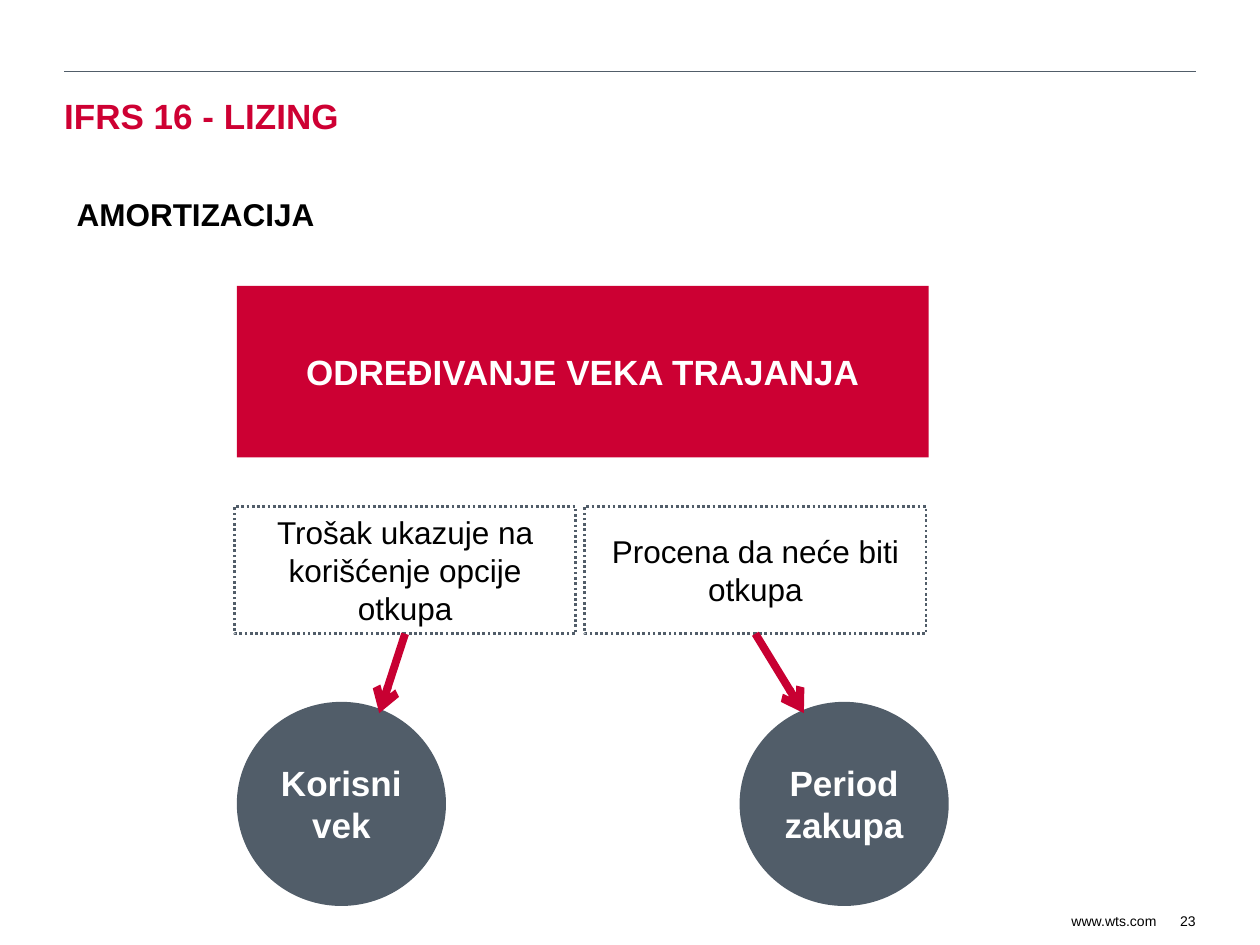
from dataclasses import dataclass

from lxml import etree
from pptx import Presentation
from pptx import util as u
from pptx.dml import color
from pptx.enum import dml, shapes, text
from pptx.oxml import ns


@dataclass(frozen=True)
class Theme:
    font: str = "Arial"
    title_red: str = "CE0033"
    banner_red: str = "CC0033"
    arrow_red: str = "C80032"
    slate: str = "515D69"
    black: str = "000000"
    white: str = "FFFFFF"
    large: int = 20
    medium: int = 18
    small: int = 8


THEME = Theme()
KIND = shapes.MSO_SHAPE
ALIGN = text.PP_ALIGN
ANCHOR = text.MSO_ANCHOR


def rgb(value):
    return color.RGBColor.from_string(value)


def inches(*values):
    return [u.Inches(value) for value in values]


def write(frame, words, size, ink, bold=False, align=ALIGN.LEFT,
          anchor=ANCHOR.MIDDLE, wrap=True, margins=None):
    frame.word_wrap = wrap
    frame.auto_size = text.MSO_AUTO_SIZE.NONE
    frame.vertical_anchor = anchor
    if margins is not None:
        (frame.margin_left, frame.margin_top,
         frame.margin_right, frame.margin_bottom) = inches(*margins)
    paragraph = frame.paragraphs[0]
    paragraph.alignment = align
    run = paragraph.add_run()
    run.text = words
    run.font.name = THEME.font
    run.font.size = u.Pt(size)
    run.font.bold = bold
    run.font.color.rgb = rgb(ink)


def add_line(slide, start, end, ink, width):
    line = slide.shapes.add_connector(
        shapes.MSO_CONNECTOR.STRAIGHT, *inches(*start, *end))
    line.line.color.rgb = rgb(ink)
    line.line.width = u.Pt(width)
    etree.SubElement(line._element.spPr, ns.qn("a:effectLst"))
    return line


def add_filled(slide, kind, box, fill, words):
    filled = slide.shapes.add_shape(kind, *inches(*box))
    filled.shadow.inherit = False
    filled.fill.solid()
    filled.fill.fore_color.rgb = rgb(fill)
    filled.line.fill.background()
    write(filled.text_frame, words, THEME.large, THEME.white, True, ALIGN.CENTER)


def add_condition(slide, box, words):
    condition = slide.shapes.add_shape(KIND.RECTANGLE, *inches(*box))
    condition.shadow.inherit = False
    condition.fill.background()
    condition.line.color.rgb = rgb(THEME.slate)
    condition.line.width = u.Pt(1.5)
    condition.line.dash_style = dml.MSO_LINE.ROUND_DOT
    write(condition.text_frame, words, THEME.medium, THEME.black, align=ALIGN.CENTER)


def add_arrow(slide, start, end):
    arrow = add_line(slide, start, end, THEME.arrow_red, 4.5)
    etree.SubElement(arrow.line._get_or_add_ln(), ns.qn("a:tailEnd"), type="arrow")


def add_header(slide, box):
    left, top, width, height = box
    # Rule above the title
    add_line(slide, (left, top), (left + width, top), THEME.slate, 0.75)
    # Title
    title = slide.shapes.title
    title.left, title.top, title.width, title.height = inches(
        left, top + 0.15, width, 0.67)
    write(title.text_frame, "IFRS 16 - LIZING", THEME.large, THEME.title_red,
          True, anchor=ANCHOR.TOP, margins=(0, 0.03, 0, 0))
    # Topic
    topic = slide.shapes.add_textbox(*inches(left, top + 0.93, 8.82, height - 0.93))
    write(topic.text_frame, "AMORTIZACIJA", THEME.medium, THEME.black,
          True, anchor=ANCHOR.TOP)


def add_decision(slide, box):
    left, top, width, height = box
    # Banner
    add_filled(slide, KIND.RECTANGLE, (left, top, width, 1.36),
               THEME.banner_red, "ODREĐIVANJE VEKA TRAJANJA")

    # Each branch: condition, outcome, outcome offset, arrow tip offset
    branches = [
        ("Trošak ukazuje na korišćenje opcije otkupa", "Korisni vek", 0, 1.13),
        ("Procena da neće biti otkupa", "Period zakupa", 3.99, 4.5),
    ]
    condition_w, condition_h, pitch = 2.71, 1.01, 2.78
    condition_top = top + 1.75
    outcome_w, outcome_h = 1.66, 1.62
    for index, (condition, outcome, offset, tip) in enumerate(branches):
        condition_left = left - 0.02 + index * pitch
        add_filled(slide, KIND.OVAL,
                   (left + offset, top + height - outcome_h, outcome_w, outcome_h),
                   THEME.slate, outcome)
        add_condition(slide, (condition_left, condition_top, condition_w, condition_h),
                      condition)
        condition_bottom = condition_top + condition_h
        add_arrow(slide, (condition_left + condition_w / 2, condition_bottom),
                  (left + tip, condition_bottom + 0.63))


def add_footer(slide, box):
    left, top, width, height = box
    number_w, address_w = 0.22, 0.69
    parts = [("www.wts.com", left, address_w),
             ("23", left + width - number_w, number_w)]
    for words, part_left, part_width in parts:
        part = slide.shapes.add_textbox(*inches(part_left, top, part_width, height))
        write(part.text_frame, words, THEME.small, THEME.black,
              align=ALIGN.RIGHT, wrap=False, margins=(0, 0, 0, 0))


def main():
    deck = Presentation()
    deck.slide_width, deck.slide_height = inches(10, 7.5)
    slide = deck.slides.add_slide(deck.slide_layouts.get_by_name("Title Only"))
    add_header(slide, (0.51, 0.57, 8.98, 2.06))
    add_decision(slide, (1.88, 2.27, 5.49, 4.92))
    add_footer(slide, (8.49, 7.24, 1, 0.14))
    deck.save("out.pptx")


if __name__ == "__main__":
    main()
